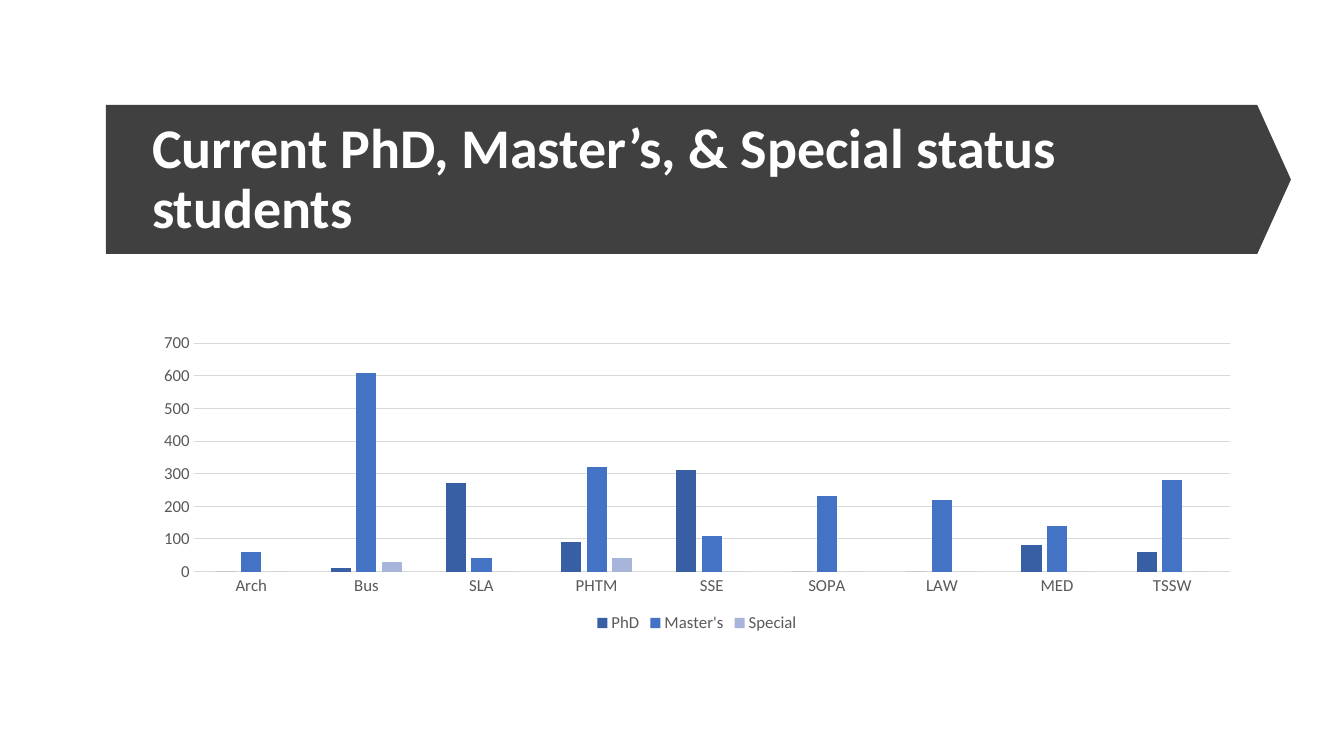
from pptx import Presentation
from pptx.chart.data import CategoryChartData
from pptx.dml.color import RGBColor
from pptx.enum.chart import XL_CHART_TYPE as ChartType, XL_LEGEND_POSITION as LegendSide
from pptx.enum.chart import XL_TICK_MARK as TickMark
from pptx.enum.shapes import MSO_SHAPE as Preset
from pptx.enum.text import MSO_ANCHOR as Anchor, MSO_AUTO_SIZE as AutoSize, PP_ALIGN as Align
from pptx.util import Emu, Pt

EMU_PER_PX = 914400 / 100.8

SCHOOLS = ["Arch", "Bus", "SLA", "PHTM", "SSE", "SOPA", "LAW", "MED", "TSSW"]
ENROLMENT = [
    ("PhD", "385FA3", [0, 10, 270, 90, 310, 0, 0, 80, 60]),
    ("Master's", "4472C4", [60, 610, 40, 320, 110, 230, 220, 140, 280]),
    ("Special", "A8B5DB", [0, 30, 0, 40, 0, 0, 0, 0, 0]),
]


def px(*lengths):
    return [Emu(round(length * EMU_PER_PX)) for length in lengths]


def color(hex_string):
    return RGBColor.from_string(hex_string)


class SlideBuilder:
    typeface = "Calibri"
    banner_fill = "404040"
    title_color = "FFFFFF"
    label_color = "595959"
    grid_color = "D9D9D9"

    def __init__(self, slide):
        self.slide = slide

    def style_font(self, font, size, hex_string, bold=False):
        font.name = self.typeface
        font.size = Pt(size)
        font.bold = bold
        font.color.rgb = color(hex_string)

    def style_line(self, line):
        line.color.rgb = color(self.grid_color)
        line.width = Pt(0.75)

    def title(self, text, box):
        heading = self.slide.shapes.title
        heading.left, heading.top, heading.width, heading.height = px(*box)
        frame = heading.text_frame
        frame.word_wrap = True
        frame.auto_size = AutoSize.NONE
        frame.vertical_anchor = Anchor.MIDDLE
        paragraph = frame.paragraphs[0]
        paragraph.alignment = Align.LEFT
        paragraph.line_spacing = 0.9
        run = paragraph.add_run()
        run.text = text
        self.style_font(run.font, 40, self.title_color, bold=True)

    def banner(self, box):
        """Down arrow turned to point right, placed behind the title."""
        arrow = self.slide.shapes.add_shape(Preset.DOWN_ARROW, *px(*box))
        arrow.rotation = 270
        arrow.adjustments[0] = 1
        arrow.adjustments[1] = 0.226
        arrow.shadow.inherit = False
        arrow.fill.solid()
        arrow.fill.fore_color.rgb = color(self.banner_fill)
        arrow.line.fill.background()
        self.slide.shapes.title.element.addprevious(arrow.element)

    def column_chart(self, categories, series_rows, box):
        data = CategoryChartData()
        data.categories = categories
        for name, _, values in series_rows:
            data.add_series(name, values)
        chart = self.slide.shapes.add_chart(
            ChartType.COLUMN_CLUSTERED, *px(*box), data).chart
        chart.has_title = False
        self.style_font(chart.font, 10, "000000")

        # Columns
        plot = chart.plots[0]
        plot.vary_by_categories = False
        plot.gap_width = 219
        plot.overlap = -27
        for series, (_, fill, _) in zip(plot.series, series_rows):
            series.format.fill.solid()
            series.format.fill.fore_color.rgb = color(fill)

        # Axes and grid
        schools, students = chart.category_axis, chart.value_axis
        for axis in (schools, students):
            axis.major_tick_mark = axis.minor_tick_mark = TickMark.NONE
            self.style_font(axis.tick_labels.font, 12, self.label_color)
        self.style_line(schools.format.line)
        students.format.line.fill.background()
        students.minimum_scale, students.maximum_scale = 0, 700
        students.major_unit = 100
        students.has_major_gridlines = True
        self.style_line(students.major_gridlines.format.line)

        # Legend
        chart.has_legend = True
        chart.legend.position = LegendSide.BOTTOM
        chart.legend.include_in_layout = False
        self.style_font(chart.legend.font, 12, self.label_color)


def main():
    deck = Presentation()
    deck.slide_width, deck.slide_height = px(1344, 756)
    title_only = deck.slide_layouts[5]
    builder = SlideBuilder(deck.slides.add_slide(title_only))

    # Heading
    builder.banner((624, -413, 149, 1185))
    builder.title("Current PhD, Master’s, & Special status students",
                  (142, 133, 1105, 95))

    # Student counts by school
    builder.column_chart(SCHOOLS, ENROLMENT, (142, 327, 1110, 310))
    deck.save("out.pptx")


if __name__ == "__main__":
    main()
